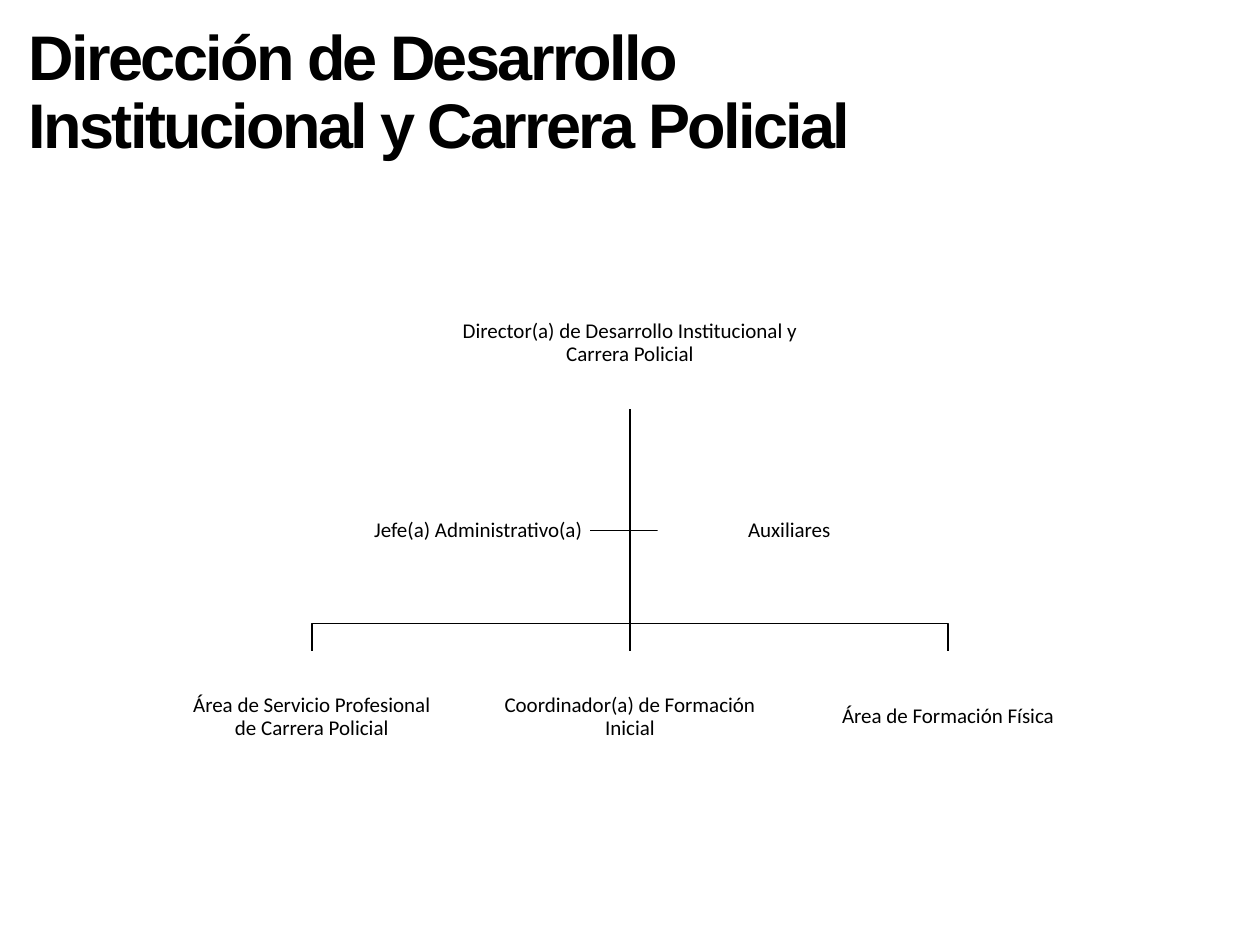
from dataclasses import dataclass

from lxml import etree
from pptx import Presentation
from pptx.dml.color import RGBColor
from pptx.enum.shapes import MSO_CONNECTOR, MSO_SHAPE
from pptx.enum.text import MSO_ANCHOR, MSO_AUTO_SIZE, PP_ALIGN
from pptx.oxml.ns import qn
from pptx.util import Pt

BLACK = RGBColor(0x00, 0x00, 0x00)
WHITE = RGBColor(0xFF, 0xFF, 0xFF)
RECTANGLE = MSO_SHAPE.RECTANGLE
STRAIGHT = MSO_CONNECTOR.STRAIGHT
MIDDLE = MSO_ANCHOR.MIDDLE
CENTER = PP_ALIGN.CENTER
GROW = MSO_AUTO_SIZE.SHAPE_TO_FIT_TEXT
TOP_SITE, BOTTOM_SITE = 0, 2

# Layout, in points
AXIS = 360
BOX_W, BOX_H = 150.5, 75.2
DIRECTOR_TOP = 158.6
DIRECTOR_BOTTOM = DIRECTOR_TOP + BOX_H
STAFF_Y = 303.2
BUS_Y = 356.4
AREA_TOP = 372.2
AREA_PITCH = 181.8
HEAD_W = 127.4


@dataclass
class Post:
    role: str
    center_x: float
    center_y: float
    width: float = BOX_W
    height: float = BOX_H
    filled: bool = True


AREA_Y = AREA_TOP + BOX_H / 2
DIRECTOR = Post("Director(a) de Desarrollo Institucional y Carrera Policial",
                AXIS, DIRECTOR_TOP + BOX_H / 2, 208.8, filled=False)
AREAS = [
    Post(role, AXIS + offset * AREA_PITCH, AREA_Y)
    for offset, role in enumerate((
        "Área de Servicio Profesional de Carrera Policial",
        "Coordinador(a) de Formación Inicial",
        "Área de Formación Física",
    ), start=-1)
]
ADMIN_HEAD = Post("Jefe(a) Administrativo(a)", 273.3, STAFF_Y, HEAD_W, 64)
ASSISTANTS = Post("Auxiliares", 451, STAFF_Y)


def add_post(slide, post: Post):
    box = slide.shapes.add_shape(
        RECTANGLE, Pt(post.center_x - post.width / 2),
        Pt(post.center_y - post.height / 2), Pt(post.width), Pt(post.height))
    box.shadow.inherit = False
    box.line.fill.background()
    if post.filled:
        box.fill.solid()
        box.fill.fore_color.rgb = WHITE
    else:
        box.fill.background()
    frame = box.text_frame
    frame.word_wrap = True
    frame.vertical_anchor = MIDDLE
    frame.margin_left = frame.margin_right = Pt(0.6)
    frame.margin_top = frame.margin_bottom = Pt(0.6)
    paragraph = frame.paragraphs[0]
    paragraph.alignment = CENTER
    add_run(paragraph, post.role, "Calibri", 12)
    return box


def add_run(paragraph, text: str, font_name: str, size: float):
    paragraph.line_spacing = 0.9
    run = paragraph.add_run()
    run.text = text
    run.font.name = font_name
    run.font.size = Pt(size)
    run.font.color.rgb = BLACK
    return run


def style_line(line) -> None:
    line.color.rgb = BLACK
    line.width = Pt(1)


def add_branch(slide, points: list[tuple[float, float]]) -> None:
    start, *rest = [(Pt(x), Pt(y)) for x, y in points]
    builder = slide.shapes.build_freeform(*start)
    builder.add_line_segments(rest, close=False)
    branch = builder.convert_to_shape()
    branch.shadow.inherit = False
    branch.fill.background()
    style_line(branch.line)


def add_trunk(slide, upper, lower) -> None:
    trunk = slide.shapes.add_connector(
        STRAIGHT, Pt(AXIS), Pt(DIRECTOR_BOTTOM), Pt(AXIS), Pt(AREA_TOP))
    trunk.begin_connect(upper, BOTTOM_SITE)
    trunk.end_connect(lower, TOP_SITE)
    style_line(trunk.line)
    etree.SubElement(trunk._element.spPr, qn("a:effectLst"))


def add_title(slide, text: str) -> None:
    title = slide.shapes.add_textbox(Pt(9.4), Pt(11.5), Pt(537), Pt(85.7))
    frame = title.text_frame
    frame.word_wrap = True
    frame.auto_size = GROW
    run = add_run(frame.paragraphs[0], text, "Arial", 36)
    run.font.bold = True
    run._r.get_or_add_rPr().set("spc", "-150")


def main() -> None:
    prs = Presentation()
    prs.slide_width, prs.slide_height = Pt(720), Pt(540)
    slide = prs.slides.add_slide(prs.slide_layouts[6])

    # Branches to the staff posts and the outer areas
    staff_edges = (ASSISTANTS.center_x - ASSISTANTS.width / 2,
                   ADMIN_HEAD.center_x + ADMIN_HEAD.width / 2)
    for edge in staff_edges:
        add_branch(slide, [(AXIS, DIRECTOR_BOTTOM), (AXIS, STAFF_Y), (edge, STAFF_Y)])
    for area in (AREAS[0], AREAS[-1]):
        add_branch(slide, [(AXIS, DIRECTOR_BOTTOM), (AXIS, BUS_Y),
                           (area.center_x, BUS_Y), (area.center_x, AREA_TOP)])

    # Posts, with the trunk from the director to the middle area
    director_box = add_post(slide, DIRECTOR)
    area_boxes = [add_post(slide, area) for area in AREAS]
    for staff in (ADMIN_HEAD, ASSISTANTS):
        add_post(slide, staff)
    add_trunk(slide, director_box, area_boxes[1])

    # Title
    add_title(slide, "Dirección de Desarrollo Institucional y Carrera Policial")

    prs.save("out.pptx")


if __name__ == "__main__":
    main()
